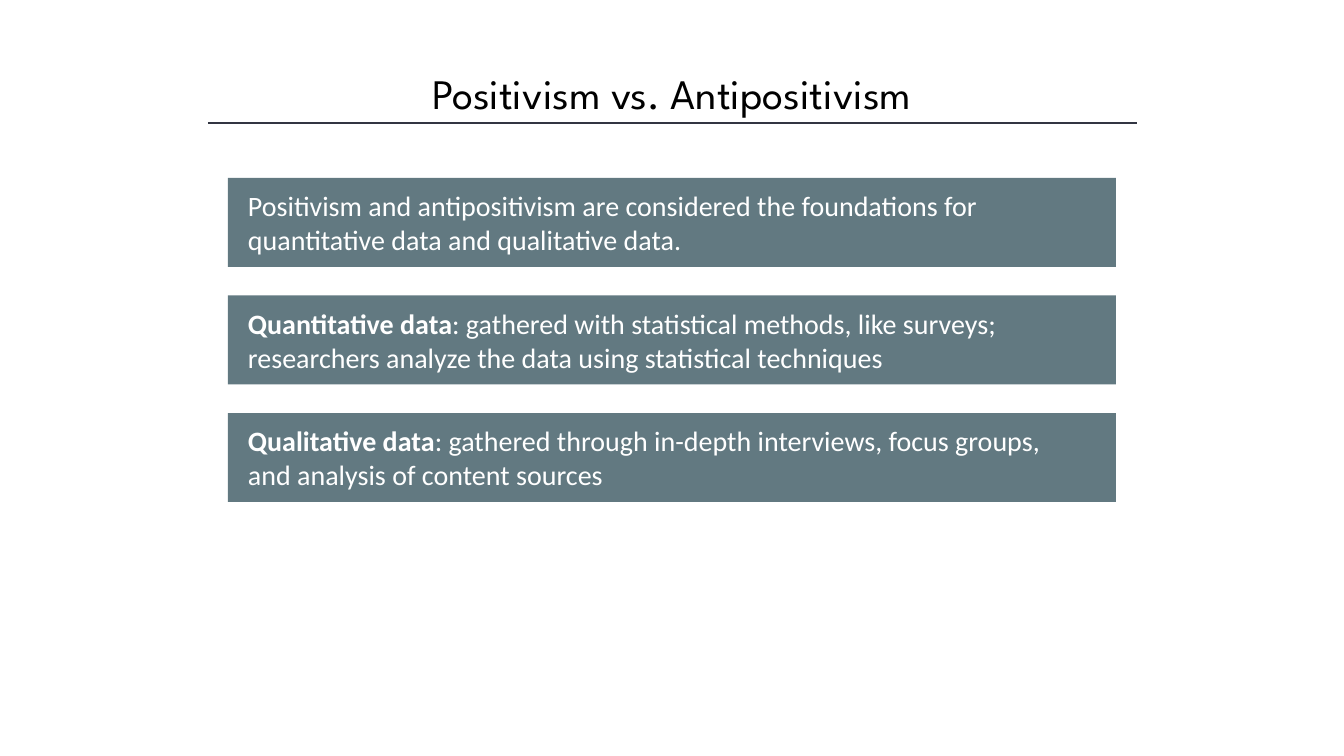
"""Build the slide comparing positivism and antipositivism."""
from pptx import Presentation
from pptx import util as u
from pptx.dml.color import RGBColor
from pptx.enum import shapes, text
from pptx.oxml.ns import qn
from lxml import etree

PX = 914400 / 100.8
COLORS = {"title": "000000", "rule": "323542", "card": "627981", "words": "FFFFFF"}
STATEMENTS = [
    [("Positivism and antipositivism are considered the foundations for "
      "quantitative data and qualitative data.", False)],
    [("Quantitative data", True),
     (": gathered with statistical methods, like surveys; "
      "researchers analyze the data using statistical techniques", False)],
    [("Qualitative data", True),
     (": gathered through in-depth interviews, focus groups, "
      "and analysis of content sources", False)],
]
CARD_TOP, CARD_HEIGHT, CARD_PITCH = 178, 89, 117.5


def px(*lengths):
    return [u.Emu(round(length * PX)) for length in lengths]


def add_run(paragraph, words, font, size, color, bold=False):
    run = paragraph.add_run()
    run.text = words
    run.font.name = font
    run.font.size = u.Pt(size)
    run.font.bold = bold
    run.font.color.rgb = RGBColor.from_string(COLORS[color])


prs = Presentation()
prs.slide_width, prs.slide_height = px(1344, 756)
slide = prs.slides.add_slide(prs.slide_layouts[5])

heading = slide.shapes.title
heading.left, heading.top, heading.width, heading.height = px(168, 62, 1008, 61)
heading.text_frame.auto_size = text.MSO_AUTO_SIZE.NONE
heading.text_frame.vertical_anchor = text.MSO_ANCHOR.TOP
heading_line = heading.text_frame.paragraphs[0]
heading_line.alignment = text.PP_ALIGN.CENTER
add_run(heading_line, "Positivism vs. Antipositivism", "League Spartan", 30, "title")

rule = slide.shapes.add_connector(shapes.MSO_CONNECTOR.STRAIGHT, *px(208, 123, 1137, 123))
rule.line.width = u.Pt(1)
rule.line.color.rgb = RGBColor.from_string(COLORS["rule"])
etree.SubElement(rule._element.spPr, qn("a:effectLst"))

for row, statement in enumerate(STATEMENTS):
    card = slide.shapes.add_shape(
        shapes.MSO_SHAPE.RECTANGLE,
        *px(228, CARD_TOP + row * CARD_PITCH, 888, CARD_HEIGHT))
    card.shadow.inherit = False
    card.fill.solid()
    card.fill.fore_color.rgb = RGBColor.from_string(COLORS["card"])
    card.line.fill.background()
    frame = card.text_frame
    frame.word_wrap = True
    frame.vertical_anchor = text.MSO_ANCHOR.MIDDLE
    frame.margin_left, frame.margin_right = px(20, 27)
    paragraph = frame.paragraphs[0]
    paragraph.alignment = text.PP_ALIGN.LEFT
    for words, bold in statement:
        add_run(paragraph, words, "Calibri", 20, "words", bold)

prs.save("out.pptx")
